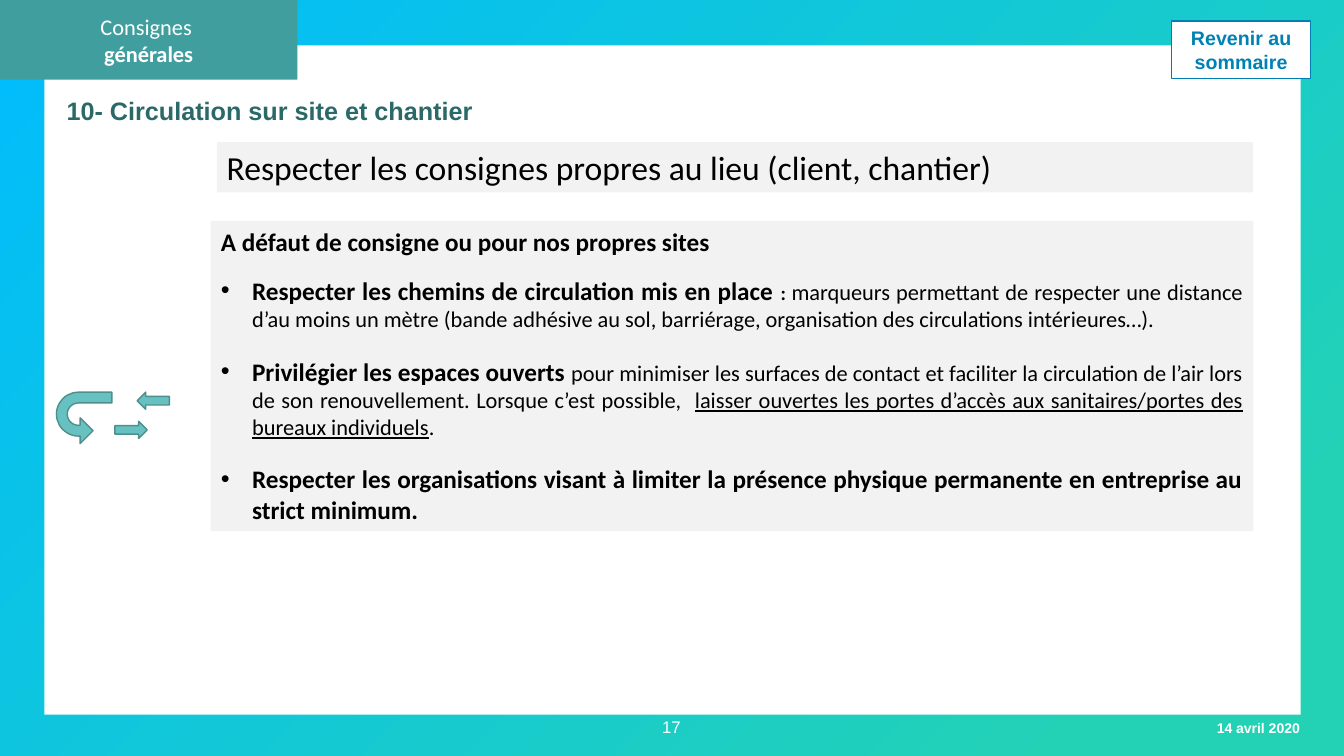
"""Build the slide on moving around sites and worksites."""
from dataclasses import dataclass

from lxml import etree
from pptx import Presentation
from pptx.dml.color import RGBColor as Rgb
from pptx.enum.shapes import MSO_SHAPE as Kind
from pptx.enum.text import MSO_ANCHOR as Anchor, MSO_AUTO_SIZE as Fit, PP_ALIGN as Align
from pptx.oxml import parse_xml
from pptx.oxml.ns import qn
from pptx.util import Inches, Pt

GRAD = """<a:gradFill xmlns:a="http://schemas.openxmlformats.org/drawingml/2006/main" rotWithShape="1">
<a:gsLst><a:gs pos="13000"><a:srgbClr val="{}"/></a:gs><a:gs pos="100000"><a:srgbClr val="{}"/></a:gs></a:gsLst>
<a:path path="circle"><a:fillToRect l="100000" t="100000"/></a:path>
<a:tileRect r="-100000" b="-100000"/></a:gradFill>"""


@dataclass(frozen=True)
class Theme:
    """Colours, fonts and type sizes."""
    green: str = "23D2B5"
    sky: str = "00BCFD"
    white: str = "FFFFFF"
    black: str = "000000"
    grey: str = "F2F2F2"
    teal: str = "419E9E"
    dark: str = "2B6969"
    mint: str = "68C1C1"
    edge: str = "4D8F8F"
    blue: str = "0081B4"
    rim: str = "007FB2"
    sans: str = "Arial"
    text: str = "Calibri"
    lead: int = 24
    head: int = 18
    body: int = 16
    small: int = 14
    page: int = 12
    date: int = 10


def write(para, text, size, font, color, bold=False, line=False):
    """Add a formatted run to a paragraph."""
    run = para.add_run()
    run.text = text
    face = run.font
    face.size, face.name, face.bold, face.underline = Pt(size), font, bold, line
    face.color.rgb = Rgb.from_string(color)


class Deck:
    """Hold the style and the current slide."""

    def __init__(self, theme, slide):
        """Keep the theme and the slide."""
        self.theme, self.slide = theme, slide

    def place(self, item, box):
        """Move a placeholder to a box, in front of what is drawn."""
        item.left, item.top, item.width, item.height = map(Inches, box)
        item.element.getparent().append(item.element)
        return self.frame(item)

    def frame(self, item, anchor=Anchor.TOP):
        """Prepare the text frame of a shape."""
        frame = item.text_frame
        frame.word_wrap, frame.auto_size = True, Fit.NONE
        frame.vertical_anchor = anchor
        return frame

    def shape(self, kind, box, fill=None, line=None):
        """Draw a preset shape."""
        item = self.slide.shapes.add_shape(kind, *map(Inches, box))
        item.shadow.inherit = False
        if fill:
            item.fill.solid()
            item.fill.fore_color.rgb = Rgb.from_string(fill)
        if line:
            item.line.color.rgb = Rgb.from_string(line)
            item.line.width = Pt(1)
        else:
            item.line.fill.background()
        return item

    def fade(self, box):
        """Draw the gradient backdrop."""
        item = self.shape(Kind.RECTANGLE, box, self.theme.green)
        old = item.element.spPr.find(qn("a:solidFill"))
        old.getparent().replace(old, parse_xml(GRAD.format(self.theme.green, self.theme.sky)))

    def label(self, box, text, align, **style):
        """Add a one-line text box."""
        item = self.slide.shapes.add_textbox(*map(Inches, box))
        self.line(self.frame(item).paragraphs[0], text, align, **style)

    def panel(self, box, rows, fill, line=None, align=Align.CENTER, anchor=Anchor.MIDDLE):
        """Draw a rectangle with a paragraph for each row."""
        frame = self.frame(self.shape(Kind.RECTANGLE, box, fill, line), anchor)
        for i, (text, style) in enumerate(rows):
            para = frame.add_paragraph() if i else frame.paragraphs[0]
            self.line(para, text, align, **style)

    def line(self, para, text, align, **style):
        """Fill an aligned paragraph with one run."""
        para.alignment = align
        para.space_before = Pt(0)
        write(para, text, **style)

    def title(self, box, text, **style):
        """Fill the title placeholder."""
        frame = self.place(self.slide.shapes.title, box)
        self.line(frame.paragraphs[0], text, Align.LEFT, **style)

    def body(self, box, rows):
        """Fill the body placeholder with rows of gap, bullet flag and runs."""
        item = self.slide.placeholders[1]
        frame = self.place(item, box)
        item.fill.solid()
        item.fill.fore_color.rgb = Rgb.from_string(self.theme.grey)
        for i, (gap, dot, runs) in enumerate(rows):
            para = frame.add_paragraph() if i else frame.paragraphs[0]
            self.dot(para, dot)
            para.alignment, para.space_before = Align.JUSTIFY, Pt(gap)
            for text, style in runs:
                write(para, text, font=self.theme.text, color=self.theme.black, **style)

    def dot(self, para, on):
        """Set the bullet and the hanging indent of a paragraph."""
        props = para._p.get_or_add_pPr()
        hang = Inches(0.31) if on else 0
        props.set("marL", str(hang))
        props.set("indent", str(-hang))
        if on:
            etree.SubElement(props, qn("a:buFont")).set("typeface", self.theme.sans)
            etree.SubElement(props, qn("a:buChar")).set("char", "•")
        else:
            etree.SubElement(props, qn("a:buNone"))

    def arrow(self, kind, box, flip=None, turn=0, bends=()):
        """Draw a block arrow, flipped or turned."""
        item = self.shape(kind, box, self.theme.mint, self.theme.edge)
        item.rotation = turn
        for i, bend in enumerate(bends):
            item.adjustments[i] = bend
        if flip:
            item.element.spPr.find(qn("a:xfrm")).set(flip, "1")


def main():
    """Draw the slide and save it."""
    look = Theme()
    show = Presentation()
    show.slide_width, show.slide_height = Inches(13.33), Inches(7.5)
    deck = Deck(look, show.slides.add_slide(show.slide_layouts[1]))

    deck.fade((0, 0, 13.33, 7.5))
    deck.shape(Kind.RECTANGLE, (0.44, 0.45, 12.46, 6.64), look.white)
    link = dict(size=look.small, font=look.sans, color=look.blue, bold=True)
    deck.panel((11.62, 0.21, 1.38, 0.57), [("Revenir au sommaire", link)], look.white, look.rim)
    tab = dict(size=look.body, font=look.text, color=look.white)
    deck.panel((0, 0, 2.95, 0.79),
               [("Consignes ", tab), ("générales", dict(tab, bold=True))], look.teal)

    strong = dict(size=look.head, bold=True)
    plain = dict(size=look.body)
    deck.body((2.09, 2.19, 10.34, 3.08), [
        (0, False, [("A défaut de consigne ou pour nos propres sites", strong)]),
        (13.4, True, [
            ("Respecter les chemins de circulation mis en place ", strong),
            (": ", dict(size=look.small, bold=True)),
            ("marqueurs permettant de respecter une distance d’au moins un mètre (bande adhésive "
             "au sol, barriérage, organisation des circulations intérieures…).", plain)]),
        (17.1, True, [
            ("Privilégier les espaces ouverts ", strong),
            ("pour minimiser les surfaces de contact et faciliter la circulation de l’air lors "
             "de son renouvellement. Lorsque c’est possible,  ", plain),
            ("laisser ouvertes les portes d’accès aux sanitaires/portes des bureaux individuels",
             dict(plain, line=True)),
            (". ", plain)]),
        (17.1, True, [
            ("Respecter les organisations visant à limiter la présence physique permanente "
             "en entreprise au strict minimum.", strong)]),
    ])

    deck.arrow(Kind.U_TURN_ARROW, (0.58, 3.87, 0.51, 0.55), "flipV", 90,
               (0.21, 0.25, 0.25, 0.44, 0.66))
    deck.arrow(Kind.LEFT_ARROW, (1.36, 3.89, 0.32, 0.17))
    deck.arrow(Kind.LEFT_ARROW, (1.14, 4.18, 0.32, 0.17), "flipH")

    lead = dict(size=look.lead, font=look.text, color=look.black)
    deck.panel((2.15, 1.41, 10.28, 0.5),
               [("Respecter les consignes propres au lieu (client, chantier)", lead)],
               look.grey, align=Align.LEFT, anchor=Anchor.TOP)
    deck.title((0.56, 0.9, 10.53, 0.4), "10- Circulation sur site et chantier",
               size=look.head, font=look.sans, color=look.dark, bold=True)
    foot = dict(font=look.sans, color=look.white)
    deck.label((5.16, 7.06, 3, 0.31), "17", Align.CENTER, size=look.page, **foot)
    deck.label((7.38, 7.09, 5.61, 0.27), "14 avril 2020", Align.RIGHT,
               size=look.date, bold=True, **foot)
    show.save("out.pptx")


if __name__ == "__main__":
    main()
